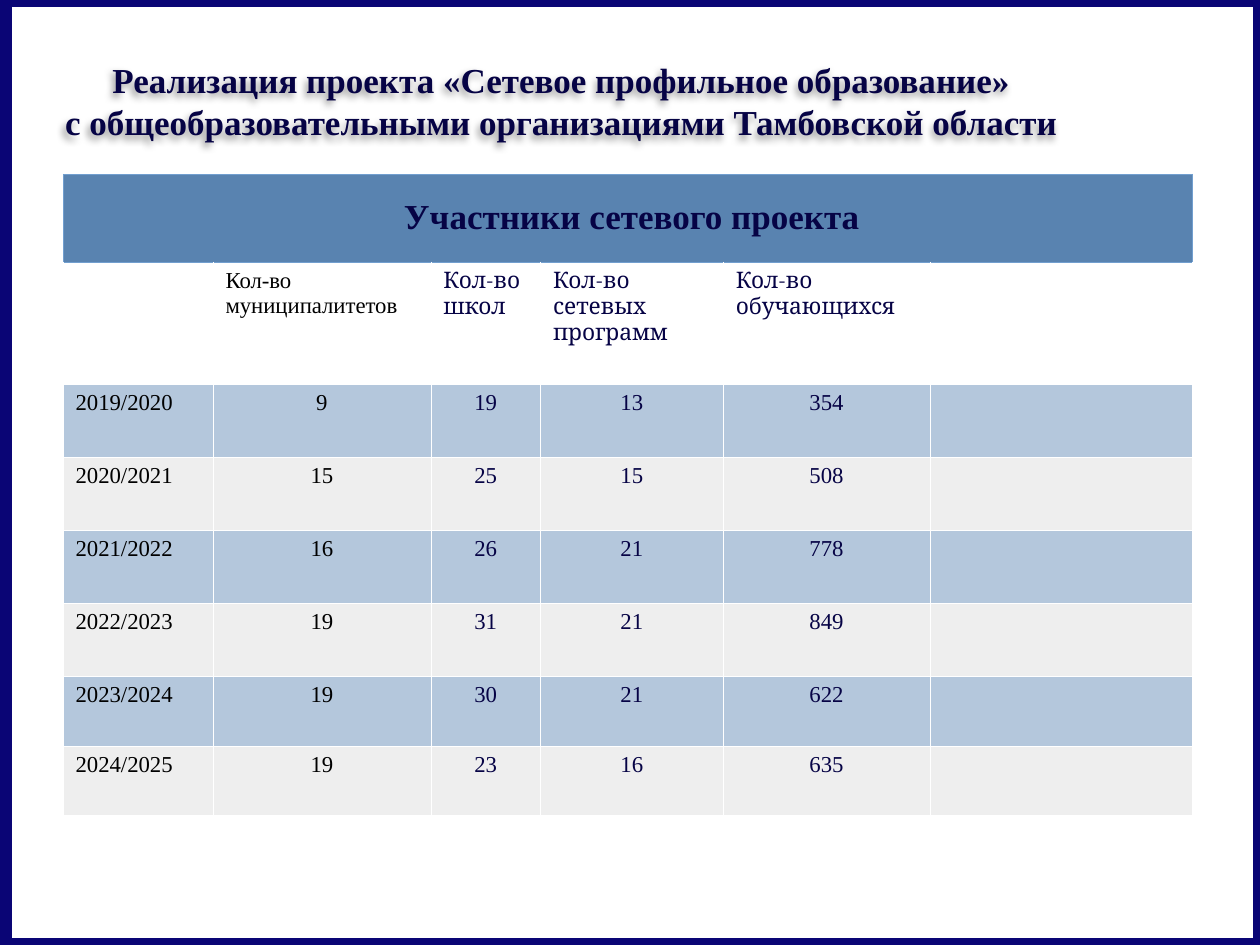
from pptx import Presentation
from pptx.dml.color import RGBColor
from pptx.enum.shapes import MSO_SHAPE
from pptx.enum.text import MSO_ANCHOR, MSO_AUTO_SIZE, PP_ALIGN
from pptx.oxml import parse_xml
from pptx.oxml.ns import nsdecls
from pptx.util import Inches, Pt

BLACK = RGBColor(0x00, 0x00, 0x00)
WHITE = RGBColor(0xFF, 0xFF, 0xFF)
NAVY = RGBColor(0x06, 0x03, 0x45)
FRAME_BLUE = RGBColor(0x0A, 0x05, 0x75)
HEADER_BLUE = RGBColor(0x59, 0x83, 0xB0)
BORDER_BLUE = RGBColor(0x72, 0x9F, 0xCF)
BAND_BLUE = RGBColor(0xB4, 0xC7, 0xDC)
BAND_GRAY = RGBColor(0xEE, 0xEE, 0xEE)

SERIF = "Times New Roman"
HEADING = (
    "Реализация проекта «Сетевое профильное образование»\v"
    "с общеобразовательными организациями Тамбовской области"
)
TABLE_HEADING = " Участники сетевого проекта"
COLUMN_LABELS = [
    "", "Кол-во муниципалитетов", "Кол-во школ",
    "Кол-во сетевых программ", "Кол-во обучающихся", "",
]
YEARS = [
    ("2019/2020", 9, 19, 13, 354, ""),
    ("2020/2021", 15, 25, 15, 508, ""),
    ("2021/2022", 16, 26, 21, 778, ""),
    ("2022/2023", 19, 31, 21, 849, ""),
    ("2023/2024", 19, 30, 21, 622, ""),
    ("2024/2025", 19, 23, 16, 635, ""),
]
COLUMN_WIDTHS = [1.19, 1.73, 0.87, 1.45, 1.64, 2.08]
ROW_HEIGHTS = [0.7, 0.97] + [0.58] * 4 + [0.55] * 2


class SlideBuilder:
    def __init__(self, slide):
        self.slide = slide

    def set_text(self, paragraph, text, size, color, align, font=SERIF, bold=False):
        paragraph.text = text
        paragraph.alignment = align
        paragraph.font.name = font
        paragraph.font.size = Pt(size)
        paragraph.font.bold = bold
        paragraph.font.color.rgb = color

    def frame(self, left, top, width, height):
        border = self.slide.shapes.add_shape(
            MSO_SHAPE.RECTANGLE,
            Inches(left), Inches(top), Inches(width), Inches(height),
        )
        border.shadow.inherit = False
        border.fill.background()
        border.line.color.rgb = FRAME_BLUE
        border.line.width = Pt(8)

    def title(self, text, left, top, width, height):
        heading = self.slide.shapes.title
        heading.left, heading.top = Inches(left), Inches(top)
        heading.width, heading.height = Inches(width), Inches(height)
        heading.text_frame.auto_size = MSO_AUTO_SIZE.NONE
        heading.text_frame.vertical_anchor = MSO_ANCHOR.MIDDLE
        self.set_text(heading.text_frame.paragraphs[0], text, 20, NAVY,
                      PP_ALIGN.CENTER, bold=True)
        heading._element.spPr.append(parse_xml(
            f'<a:effectLst {nsdecls("a")}>'
            '<a:outerShdw blurRad="50800" dist="38100" dir="8100000" algn="tr" rotWithShape="0">'
            '<a:srgbClr val="000000"><a:alpha val="40000"/></a:srgbClr>'
            '</a:outerShdw></a:effectLst>'
        ))

    def table(self, left, top, widths, heights):
        grid = self.slide.shapes.add_table(
            len(heights), len(widths), Inches(left), Inches(top),
            Inches(sum(widths)), Inches(sum(heights)),
        ).table
        grid.first_row = False
        grid.horz_banding = False
        for column, width in zip(grid.columns, widths):
            column.width = Inches(width)
        for row, height in zip(grid.rows, heights):
            row.height = Inches(height)
        return grid

    def cell(self, cell, fill, border=WHITE, top_border=None):
        cell.fill.solid()
        cell.fill.fore_color.rgb = fill
        properties = cell._tc.get_or_add_tcPr()
        for index, side in enumerate("LRTB"):
            color = top_border if side == "T" and top_border else border
            properties.insert(index, parse_xml(
                f'<a:ln{side} {nsdecls("a")} w="720"><a:solidFill>'
                f'<a:srgbClr val="{color}"/></a:solidFill></a:ln{side}>'
            ))

    def participants(self, left, top):
        grid = self.table(left, top, COLUMN_WIDTHS, ROW_HEIGHTS)
        last = len(COLUMN_WIDTHS) - 1
        banner = grid.cell(0, 0)
        banner.merge(grid.cell(0, last))
        for column in range(last + 1):
            self.cell(grid.cell(0, column), HEADER_BLUE, BORDER_BLUE)
        banner.vertical_anchor = MSO_ANCHOR.MIDDLE
        self.set_text(banner.text_frame.paragraphs[0], TABLE_HEADING, 20, NAVY,
                      PP_ALIGN.CENTER, bold=True)

        for column, label in enumerate(COLUMN_LABELS):
            cell = grid.cell(1, column)
            self.cell(cell, WHITE, top_border=BORDER_BLUE)
            self.set_text(cell.text_frame.paragraphs[0], label, 13,
                          BLACK if column < 2 else NAVY, PP_ALIGN.JUSTIFY,
                          font=SERIF if column < 2 else "Cambria")

        for number, year in enumerate(YEARS):
            for column, value in enumerate(year):
                cell = grid.cell(number + 2, column)
                self.cell(cell, BAND_GRAY if number % 2 else BAND_BLUE)
                self.set_text(cell.text_frame.paragraphs[0], str(value), 13,
                              BLACK if column < 2 else NAVY,
                              PP_ALIGN.CENTER if column else PP_ALIGN.JUSTIFY)


def main():
    presentation = Presentation()
    presentation.slide_width = Inches(10)
    presentation.slide_height = Inches(7.5)
    builder = SlideBuilder(
        presentation.slides.add_slide(presentation.slide_layouts[5])
    )
    builder.frame(0.04, 0, 9.96, 7.5)
    builder.title(HEADING, 0.28, 0.44, 8.35, 0.71)
    builder.participants(0.5, 1.38)
    presentation.save("out.pptx")


if __name__ == "__main__":
    main()
